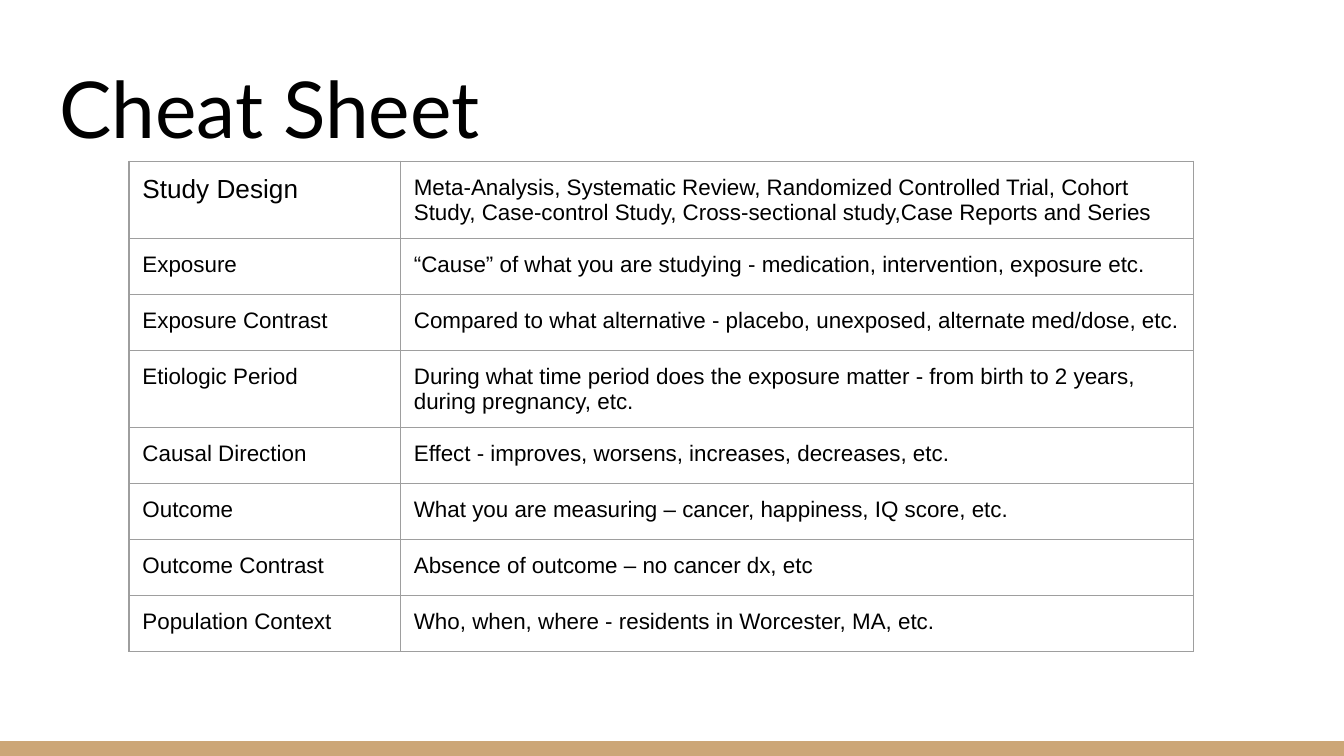
"""Build the study question cheat sheet slide."""
from lxml.etree import SubElement
from pptx import Presentation
from pptx.dml.color import RGBColor
from pptx.enum.shapes import MSO_SHAPE
from pptx.enum.text import MSO_ANCHOR, MSO_AUTO_SIZE, PP_ALIGN
from pptx.oxml.ns import qn
from pptx.util import Inches, Pt

HEADING = "Cheat Sheet"
ELEMENTS = [
    ("Study Design", "Meta-Analysis, Systematic Review, Randomized Controlled Trial, Cohort Study, "
     "Case-control Study, Cross-sectional study,Case Reports and Series"),
    ("Exposure", "“Cause” of what you are studying - medication, intervention, exposure etc."),
    ("Exposure Contrast", "Compared to what alternative - placebo, unexposed, alternate med/dose, etc."),
    ("Etiologic Period", "During what time period does the exposure matter - from birth to 2 years, "
     "during pregnancy, etc."),
    ("Causal Direction", "Effect - improves, worsens, increases, decreases, etc."),
    ("Outcome", "What you are measuring – cancer, happiness, IQ score, etc."),
    ("Outcome Contrast", "Absence of outcome – no cancer dx, etc"),
    ("Population Context", "Who, when, where - residents in Worcester, MA, etc."),
]
WIDTH = 10
HEIGHT = WIDTH * 9 / 16
MARGIN, BAR_HEIGHT = 0.34, 0.11
TABLE_LEFT, TABLE_TOP = 0.96, 1.2
ROW_HEIGHT = Pt(30)
COLUMNS = (2.02, 5.9)
INK, RULE, TAN = "000000", "9E9E9E", "CCA677"
INSETS = {f"margin_{side}": Inches(0.1) for side in ("left", "right", "top", "bottom")}


def color(value):
    return RGBColor.from_string(value)


def apply(target, values):
    for name, value in values.items():
        setattr(target, name, value)


def style_text(paragraph, font, size):
    paragraph.alignment = PP_ALIGN.LEFT
    for run in paragraph.runs:
        apply(run.font, {"name": font, "size": Pt(size)})
        run.font.color.rgb = color(INK)


def add_borders(cell):
    properties = cell._tc.get_or_add_tcPr()
    for side in ("lnL", "lnR", "lnT", "lnB"):
        border = SubElement(properties, qn(f"a:{side}"), w=str(Pt(0.75)))
        SubElement(SubElement(border, qn("a:solidFill")), qn("a:srgbClr"), val=RULE)


def add_heading(slide):
    heading = slide.shapes.title
    apply(heading, {"left": Inches(MARGIN), "top": Inches(MARGIN),
                    "width": Inches(WIDTH - 2 * MARGIN), "height": Inches(0.91)})
    frame = heading.text_frame
    frame.text = HEADING
    apply(frame, {**INSETS, "word_wrap": True, "auto_size": MSO_AUTO_SIZE.NONE,
                  "vertical_anchor": MSO_ANCHOR.BOTTOM})
    style_text(frame.paragraphs[0], "Lato", 42)


def add_footer_bar(slide):
    bar = slide.shapes.add_shape(MSO_SHAPE.RECTANGLE, 0, Inches(HEIGHT - BAR_HEIGHT),
                                 Inches(WIDTH), Inches(BAR_HEIGHT))
    bar.shadow.inherit = False
    bar.fill.solid()
    bar.fill.fore_color.rgb = color(TAN)
    bar.line.fill.background()


def add_elements(slide):
    table = slide.shapes.add_table(
        len(ELEMENTS), len(COLUMNS), Inches(TABLE_LEFT), Inches(TABLE_TOP),
        Inches(sum(COLUMNS)), ROW_HEIGHT * len(ELEMENTS)).table
    apply(table, {"first_row": False, "horz_banding": False})
    for column, width in zip(table.columns, COLUMNS):
        column.width = Inches(width)
    for row, element in enumerate(ELEMENTS):
        table.rows[row].height = ROW_HEIGHT
        for column, wording in enumerate(element):
            cell = table.cell(row, column)
            cell.text = wording
            apply(cell, {**INSETS, "vertical_anchor": MSO_ANCHOR.TOP})
            style_text(cell.text_frame.paragraphs[0], "Arial", 14 if row == column == 0 else 12)
            add_borders(cell)
            cell.fill.background()
    table.cell(0, 1).text_frame.paragraphs[0].space_after = Pt(8)


def main():
    deck = Presentation()
    apply(deck, {"slide_width": Inches(WIDTH), "slide_height": Inches(HEIGHT)})
    slide = deck.slides.add_slide(deck.slide_layouts[5])
    add_footer_bar(slide)
    add_heading(slide)
    add_elements(slide)
    deck.save("out.pptx")


if __name__ == "__main__":
    main()
